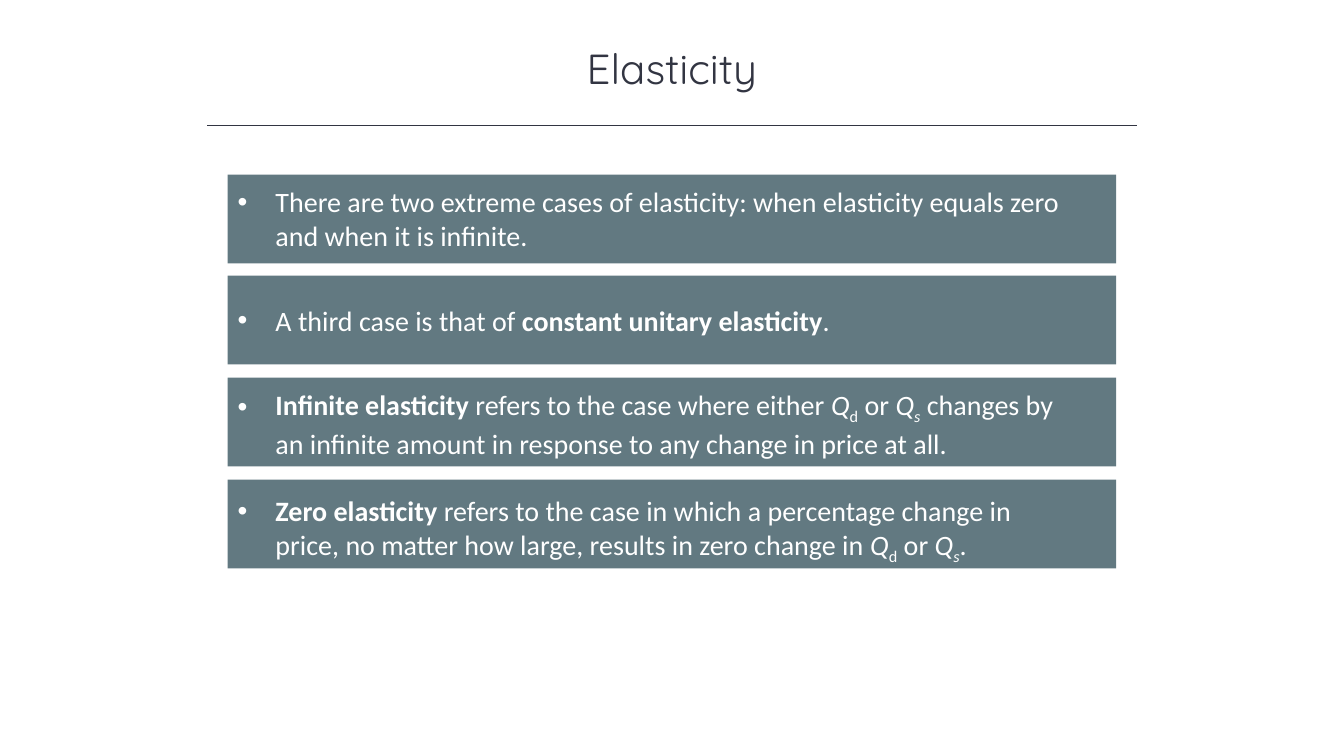
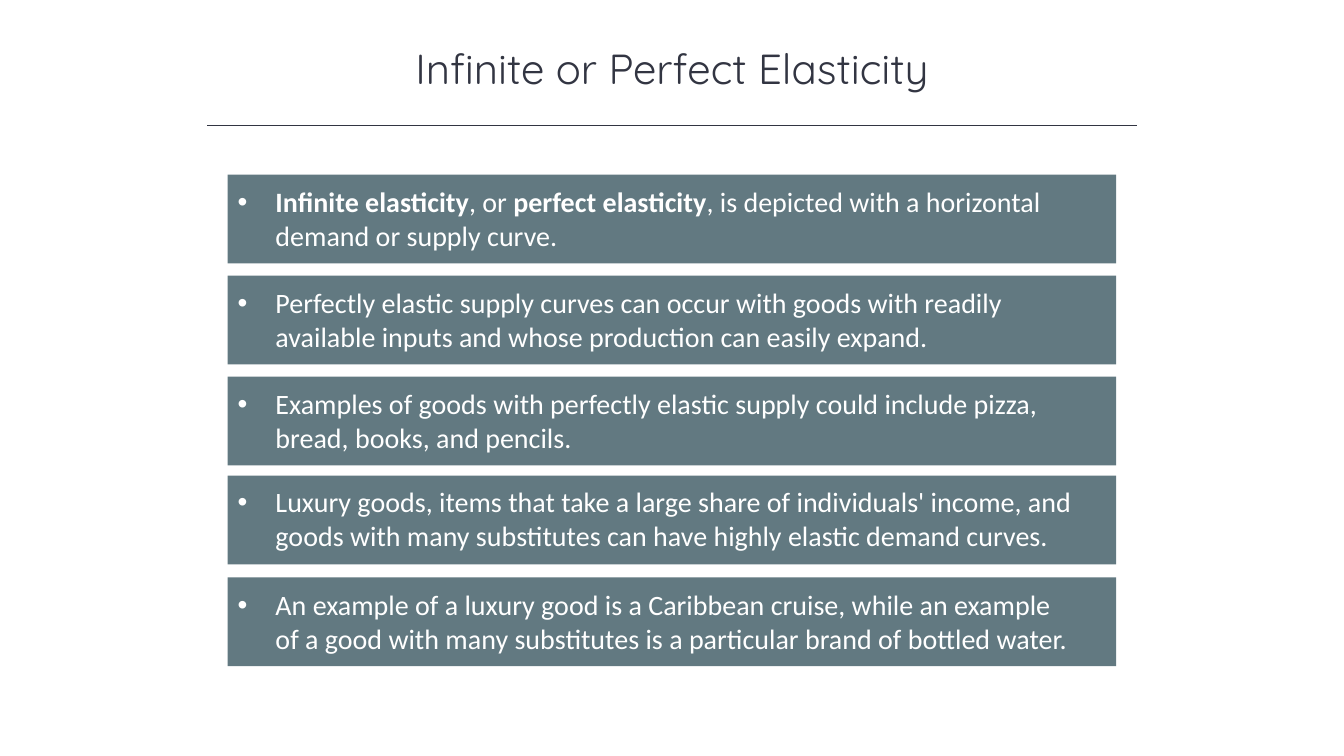
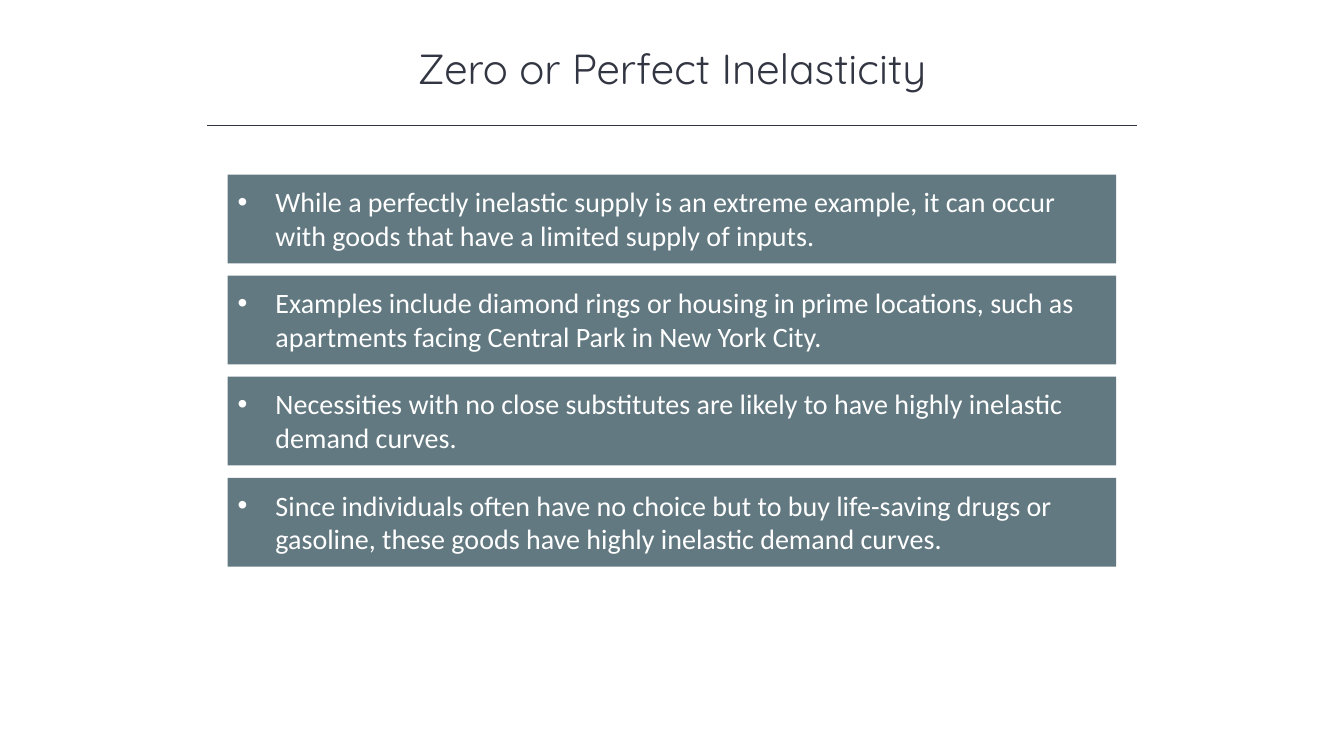
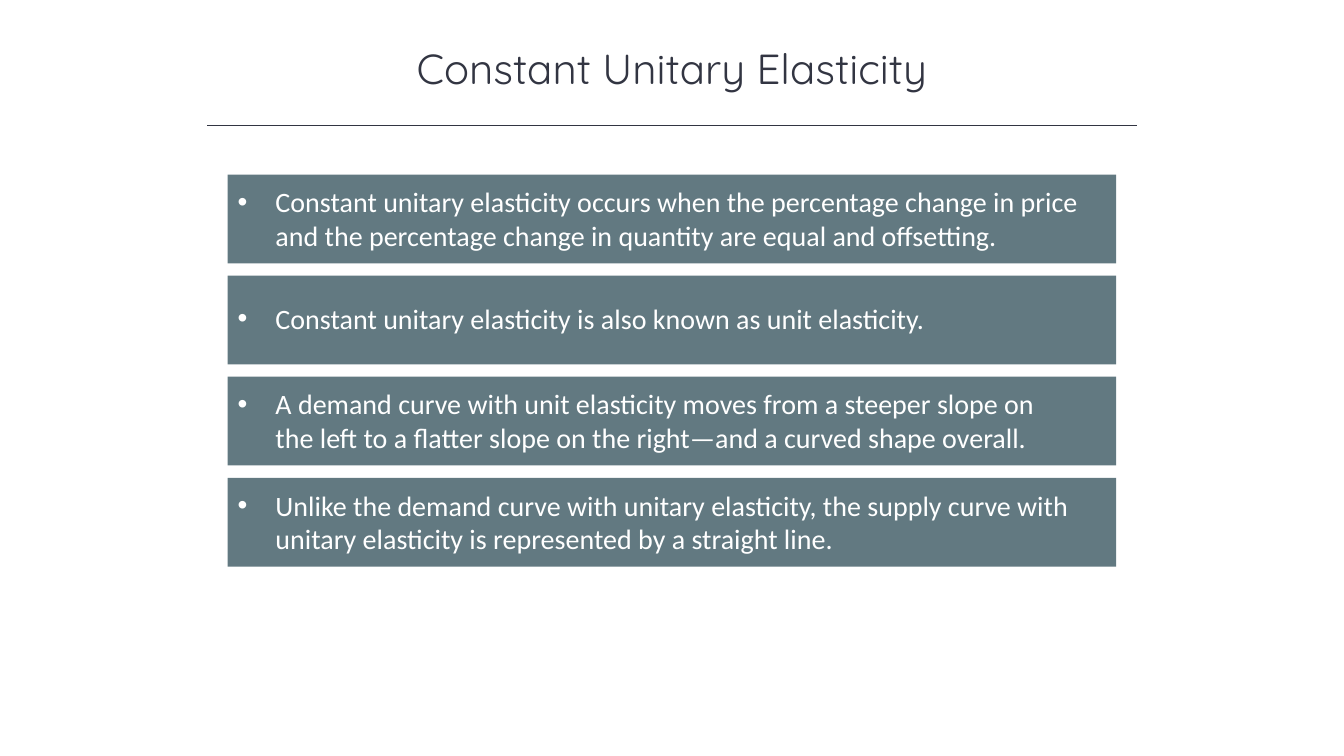
from dataclasses import dataclass

from lxml.etree import SubElement
from pptx import Presentation
from pptx.dml.color import RGBColor
from pptx.enum.shapes import MSO_CONNECTOR, MSO_SHAPE
from pptx.enum.text import MSO_ANCHOR, PP_ALIGN
from pptx.oxml.ns import qn
from pptx.util import Pt


@dataclass(frozen=True)
class Theme:
    ink: RGBColor = RGBColor(0x32, 0x35, 0x42)
    band: RGBColor = RGBColor(0x62, 0x79, 0x81)
    paper: RGBColor = RGBColor(0xFF, 0xFF, 0xFF)
    title_font: str = "Quicksand"
    body_font: str = "Calibri"
    title_size: int = 30
    body_size: int = 20


@dataclass(frozen=True)
class Box:
    left: float
    top: float
    width: float
    height: float

    def lengths(self):
        return Pt(self.left), Pt(self.top), Pt(self.width), Pt(self.height)


@dataclass(frozen=True)
class Card:
    """Spans are (text, style); drop sets the text down, shift moves the card."""
    spans: tuple
    drop: float = 3.7
    shift: float = 0


THEME = Theme()
TITLE_BOX = Box(120, 26.5, 720, 44)
RULE_BOX = Box(148, 89.5, 664, 0)
FIRST_CARD = Box(162.7, 124.7, 634.5, 63.4)
CARD_PITCH = 72.2
INSET = 7.2
RIGHT_INSET = 26.6
BULLET_INDENT = 27

PLAIN, BOLD, ITALIC, SUB, ITALIC_SUB = "", "b", "i", "s", "is"
Q_DEMAND_OR_SUPPLY = (("Q", ITALIC), ("d", SUB), (" or ", PLAIN),
                      ("Q", ITALIC), ("s", ITALIC_SUB))


def plain_card(text, **placing):
    return Card(((text, PLAIN),), **placing)


SLIDES = {
    "Elasticity": (
        plain_card("There are two extreme cases of elasticity: when elasticity "
                   "equals zero and when it is infinite."),
        Card((("A third case is that of ", PLAIN),
              ("constant unitary elasticity", BOLD), (".", PLAIN)), drop=16),
        Card((("Infinite elasticity ", BOLD),
              ("refers to the case where either ", PLAIN),
              *Q_DEMAND_OR_SUPPLY,
              (" changes by an infinite amount in response to any change in "
               "price at all.", PLAIN)), shift=0.6),
        Card((("Zero elasticity ", BOLD),
              ("refers to the case in which a percentage change in price, no "
               "matter how large, results in zero change in ", PLAIN),
              *Q_DEMAND_OR_SUPPLY, (".", PLAIN)), drop=6.5, shift=1.2),
    ),
    "Infinite or Perfect Elasticity": (
        Card((("Infinite elasticity", BOLD), (", or ", PLAIN),
              ("perfect elasticity", BOLD),
              (", is depicted with a horizontal demand or supply curve.", PLAIN))),
        plain_card("Perfectly elastic supply curves can occur with goods with "
                   "readily available inputs and whose production can easily "
                   "expand."),
        plain_card("Examples of goods with perfectly elastic supply could "
                   "include pizza, bread, books, and pencils."),
        plain_card("Luxury goods, items that take a large share of individuals' "
                   "income, and goods with many substitutes can have highly "
                   "elastic demand curves.", drop=3, shift=-1.5),
        plain_card("An example of a luxury good is a Caribbean cruise, while an "
                   "example of a good with many substitutes is a particular "
                   "brand of bottled water.", shift=-1),
    ),
    "Zero or Perfect Inelasticity": (
        plain_card("While a perfectly inelastic supply is an extreme example, "
                   "it can occur with goods that have a limited supply of inputs."),
        plain_card("Examples include diamond rings or housing in prime "
                   "locations, such as apartments facing Central Park in New "
                   "York City."),
        plain_card("Necessities with no close substitutes are likely to have "
                   "highly inelastic demand curves."),
        plain_card("Since individuals often have no choice but to buy "
                   "life-saving drugs or gasoline, these goods have highly "
                   "inelastic demand curves."),
    ),
    "Constant Unitary Elasticity": (
        plain_card("Constant unitary elasticity occurs when the percentage "
                   "change in price and the percentage change in quantity are "
                   "equal and offsetting."),
        plain_card("Constant unitary elasticity is also known as unit "
                   "elasticity.", drop=14.5),
        plain_card("A demand curve with unit elasticity moves from a steeper "
                   "slope on the left to a flatter slope on the right—and a "
                   "curved shape overall."),
        plain_card("Unlike the demand curve with unitary elasticity, the supply "
                   "curve with unitary elasticity is represented by a straight "
                   "line."),
    ),
}


def set_font(para, name, size, color):
    para.font.name = name
    para.font.size = Pt(size)
    para.font.color.rgb = color


def add_bullet(para):
    props = para._p.get_or_add_pPr()
    props.set("marL", str(Pt(BULLET_INDENT)))
    props.set("indent", str(-Pt(BULLET_INDENT)))
    bullet_font = SubElement(props, qn("a:buFont"))
    bullet_font.set("typeface", "Arial")
    SubElement(props, qn("a:buChar")).set("char", "•")


def add_spans(para, spans):
    for text, style in spans:
        span = para.add_run()
        span.text = text
        if "b" in style:
            span.font.bold = True
        if "i" in style:
            span.font.italic = True
        if "s" in style:
            span._r.get_or_add_rPr().set("baseline", "-25000")


def add_title(page, text, box):
    frame = page.shapes.add_textbox(*box.lengths()).text_frame
    frame.word_wrap = True
    para = frame.paragraphs[0]
    para.text = text
    para.alignment = PP_ALIGN.CENTER
    set_font(para, THEME.title_font, THEME.title_size, THEME.ink)


def add_rule(page, box):
    left, top, width, height = box.lengths()
    rule = page.shapes.add_connector(
        MSO_CONNECTOR.STRAIGHT, left, top, left + width, top + height)
    rule.line.color.rgb = THEME.ink
    rule.line.width = Pt(1)
    SubElement(rule._element.spPr, qn("a:effectLst"))


def add_card(page, card, box):
    shape = page.shapes.add_shape(MSO_SHAPE.RECTANGLE, *box.lengths())
    shape.shadow.inherit = False
    shape.fill.solid()
    shape.fill.fore_color.rgb = THEME.band
    shape.line.fill.background()
    frame = shape.text_frame
    frame.word_wrap = True
    frame.vertical_anchor = MSO_ANCHOR.TOP
    frame.margin_left = Pt(INSET)
    frame.margin_right = Pt(RIGHT_INSET)
    frame.margin_top = Pt(INSET / 2 + card.drop)
    frame.margin_bottom = 0
    para = frame.paragraphs[0]
    para.alignment = PP_ALIGN.LEFT
    add_bullet(para)
    set_font(para, THEME.body_font, THEME.body_size, THEME.paper)
    add_spans(para, card.spans)


def add_card_stack(page, cards, first):
    for row, card in enumerate(cards):
        top = first.top + row * CARD_PITCH + card.shift
        add_card(page, card, Box(first.left, top, first.width, first.height))


def main():
    deck = Presentation()
    deck.slide_width, deck.slide_height = Pt(960), Pt(540)
    blank = deck.slide_layouts[6]
    for title, cards in SLIDES.items():
        page = deck.slides.add_slide(blank)
        add_title(page, title, TITLE_BOX)
        add_rule(page, RULE_BOX)
        add_card_stack(page, cards, FIRST_CARD)
    deck.save("out.pptx")


if __name__ == "__main__":
    main()
